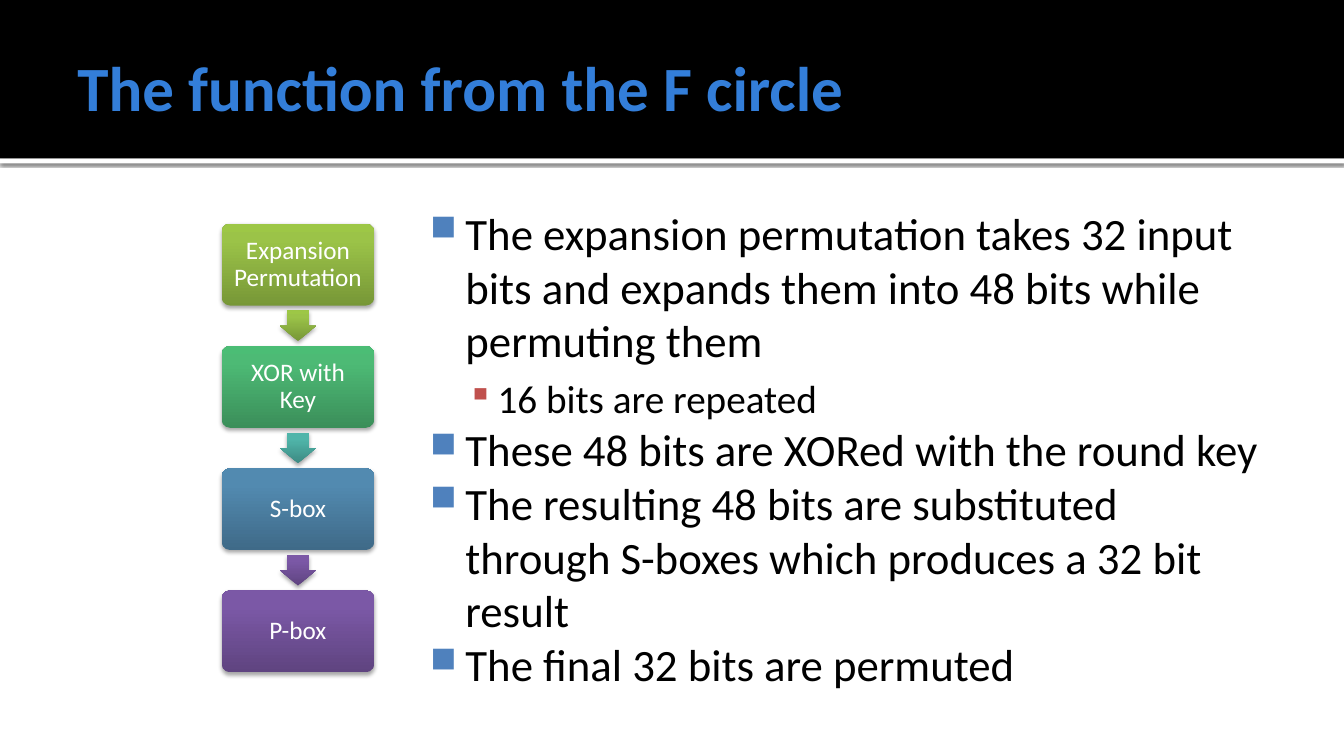
import lxml.etree
import pptx
import pptx.dml.color
import pptx.enum.shapes
import pptx.enum.text
import pptx.oxml.ns
import pptx.util

Cm = pptx.util.Cm
Pt = pptx.util.Pt
ALIGN = pptx.enum.text.PP_ALIGN
ANCHOR = pptx.enum.text.MSO_ANCHOR
SHAPE = pptx.enum.shapes.MSO_SHAPE

WIDTH, HEIGHT = 33.87, 19.05
GREEN = ("779737", "9BC348", "9DC746")
EMERALD = ("3B8F5A", "4DBA75", "4BBD75")
TEAL = ("3D8B83", "50B5AA", "4EB8AC")
BLUE = ("3F6A88", "528AB0", "518BB3")
PURPLE = ("5F4480", "7B58A6", "7C57A8")
STEPS = [
    ("Expansion Permutation", GREEN, GREEN),
    ("XOR with Key", EMERALD, TEAL),
    ("S-box", BLUE, PURPLE),
    ("P-box", PURPLE, None),
]
POINTS = [
    (0, "The expansion permutation takes 32 input bits and expands them into 48 bits while permuting them"),
    (1, "16 bits are repeated"),
    (0, "These 48 bits are XORed with the round key"),
    (0, "The resulting 48 bits are substituted through S-boxes which produces a 32 bit result"),
    (0, "The final 32 bits are permuted"),
]
LEVELS = [
    {"size": 32, "before": 0, "margin": 1.22, "indent": -0.89, "bullet": ("■", "4F81BD", 80)},
    {"size": 28, "before": 5.6, "margin": 2.03, "indent": -0.76, "bullet": ("▪", "C0504D", 90)},
]


def color(value):
    return pptx.dml.color.RGBColor.from_string(value)


def add_child(parent, tag, **attributes):
    child = lxml.etree.SubElement(parent, pptx.oxml.ns.qn(tag))
    for name, value in attributes.items():
        child.set(name, str(value))
    return child


def set_frame(frame, insets, anchor):
    frame.word_wrap = True
    frame.auto_size = pptx.enum.text.MSO_AUTO_SIZE.NONE
    frame.vertical_anchor = anchor
    frame.margin_left, frame.margin_top, frame.margin_right, frame.margin_bottom = map(Cm, insets)


def write(paragraph, text, size=18, fill="000000", bold=False, align=ALIGN.LEFT, spacing=1.0, before=0):
    paragraph.alignment = align
    paragraph.line_spacing = spacing
    paragraph.space_before = Pt(before)
    run = paragraph.add_run()
    run.text = text
    run.font.name = "Calibri"
    run.font.size = Pt(size)
    run.font.bold = bold
    run.font.color.rgb = color(fill)


def set_bullet(paragraph, character, fill, percent, margin, indent):
    properties = paragraph._p.get_or_add_pPr()
    properties.set("marL", str(Cm(margin)))
    properties.set("indent", str(Cm(indent)))
    add_child(add_child(properties, "a:buClr"), "a:srgbClr", val=fill)
    add_child(properties, "a:buSzPct", val=percent * 1000)
    add_child(properties, "a:buChar", char=character)


def add_shadow(shape, blur, distance, opacity):
    shape.shadow.inherit = False
    effects = shape._element.spPr.find(pptx.oxml.ns.qn("a:effectLst"))
    shadow = add_child(effects, "a:outerShdw", blurRad=Pt(blur), dist=Pt(distance),
                       dir=5400000, algn="ctr", rotWithShape=0)
    black = add_child(shadow, "a:srgbClr", val="000000")
    add_child(black, "a:alpha", val=opacity * 1000)


def add_block(slide, kind, left, top, width, height):
    shape = slide.shapes.add_shape(kind, Cm(left), Cm(top), Cm(width), Cm(height))
    shape.shadow.inherit = False
    shape.line.fill.background()
    return shape


def add_gradient_block(slide, kind, box, colors, adjustments):
    shape = add_block(slide, kind, *box)
    for index, value in enumerate(adjustments):
        shape.adjustments[index] = value
    shape.fill.gradient()
    shape.fill.gradient_angle = 90
    stops = shape._element.spPr.find(".//" + pptx.oxml.ns.qn("a:gsLst"))
    for stop in list(stops):
        stops.remove(stop)
    for position, value in zip((0, 80, 100), colors):
        add_child(add_child(stops, "a:gs", pos=position * 1000), "a:srgbClr", val=value)
    add_shadow(shape, 3.1, 1.8, 35)
    return shape


def build_header(slide, left, top, width, height):
    rule = add_block(slide, SHAPE.RECTANGLE, left, top + height, width, 0.13)
    band = add_block(slide, SHAPE.RECTANGLE, left, top, width, height)
    for shape, fill in ((rule, "FFFFFF"), (band, "000000")):
        shape.fill.solid()
        shape.fill.fore_color.rgb = color(fill)
    add_shadow(rule, 2.5, 0.8, 60)

    title = slide.shapes.title
    title.left, title.top = Cm(left + 1.7), Cm(top + 0.43)
    title.width, title.height = Cm(width - 3.39), Cm(height - 0.51)
    band.element.addnext(title.element)
    set_frame(title.text_frame, (0.25, 0.13, 0.13, 0.13), ANCHOR.MIDDLE)
    write(title.text_frame.paragraphs[0], "The function from the F circle",
          size=45, fill="337ED9", bold=True)


def build_points(slide, left, top, width, height):
    box = slide.shapes.add_textbox(Cm(left), Cm(top), Cm(width), Cm(height))
    frame = box.text_frame
    set_frame(frame, (0.15, 0.25, 0.25, 0.13), ANCHOR.TOP)
    for index, (level, text) in enumerate(POINTS):
        paragraph = frame.add_paragraph() if index else frame.paragraphs[0]
        style = LEVELS[level]
        paragraph.level = level
        write(paragraph, text, size=style["size"], before=style["before"])
        set_bullet(paragraph, *style["bullet"], style["margin"], style["indent"])


def build_steps(slide, left, top, width, height):
    step_height = 2.06
    pitch = (height - step_height) / (len(STEPS) - 1)
    arrow_width, arrow_height = 0.91, 0.77
    for index, (text, colors, arrow_colors) in enumerate(STEPS):
        step_top = top + index * pitch
        step = add_gradient_block(slide, SHAPE.ROUNDED_RECTANGLE,
                                  (left, step_top, width, step_height), colors, [0.1])
        set_frame(step.text_frame, (0.25,) * 4, ANCHOR.MIDDLE)
        write(step.text_frame.paragraphs[0], text, fill="FFFFFF", align=ALIGN.CENTER, spacing=0.9)
        if arrow_colors:
            arrow_left = left + (width - arrow_width) / 2
            arrow_top = step_top + (step_height + pitch - arrow_height) / 2
            add_gradient_block(slide, SHAPE.DOWN_ARROW,
                               (arrow_left, arrow_top, arrow_width, arrow_height),
                               arrow_colors, [0.6, 0.5])


def main():
    presentation = pptx.Presentation()
    presentation.slide_width, presentation.slide_height = Cm(WIDTH), Cm(HEIGHT)
    slide = presentation.slides.add_slide(presentation.slide_layouts[5])
    build_header(slide, 0, 0, WIDTH, 3.99)
    build_points(slide, 10.36, 4.93, 21.79, 12.85)
    build_steps(slide, 5.59, 5.64, 3.84, 11.3)
    presentation.save("out.pptx")


if __name__ == "__main__":
    main()
